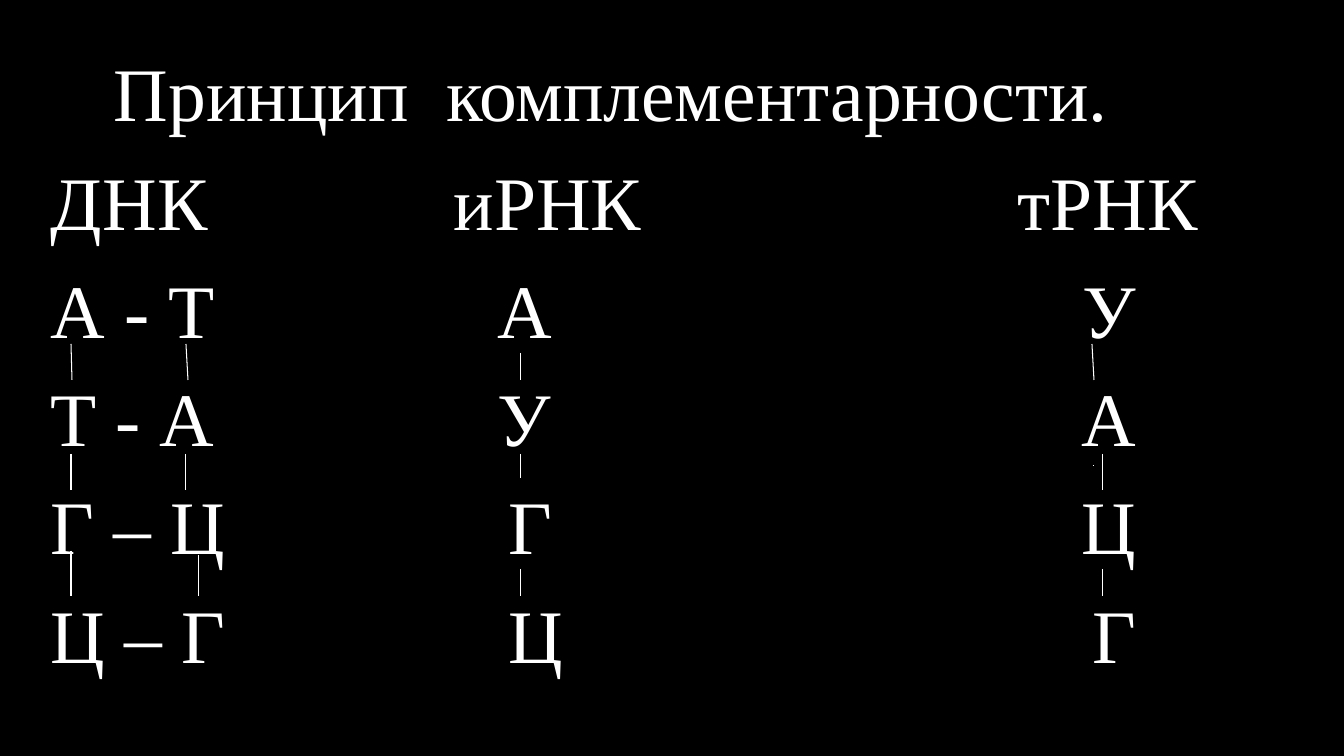
from lxml import etree
from pptx import Presentation, util as u
from pptx.dml.color import RGBColor
from pptx.enum import shapes, text
from pptx.oxml.ns import qn

# Content: text and tab stops (px from the text edge, alignment)
COLOR = {"back": "000000", "ink": "FFFFFF"}
FONT, SIZE = "Times New Roman", 54
HEAD = [(403, "l"), (967, "l")]
UPPER = [(447, "l"), (1085, "r")]
LOWER = [(458, "l"), (1085, "r")]
ROWS = [
    ("\tПринцип  комплементарности.", [(63, "l")]),
    ("ДНК\tиРНК\tтРНК", HEAD),
    ("А - Т\tА\tУ", UPPER),
    ("Т - А\tУ\tА", UPPER),
    ("Г – Ц\tГ\tЦ", LOWER),
    ("Ц – Г\tЦ\tГ", LOWER),
]

# Bonds between bases, by strand: x, top, end x, bottom
BONDS = {
    "dna left": [(71, 344, 72, 380), (71, 454, 71, 490), (71, 551, 71, 596)],
    "dna right": [(186, 344, 188, 380), (186, 454, 186, 490),
                  (199, 555, 199, 596)],
    "mrna": [(521, 353, 521, 380), (521, 454, 521, 478),
             (521, 569, 521, 596)],
    "trna": [(1092, 344, 1094, 380), (1093, 466, 1094, 466),
             (1103, 454, 1103, 490), (1103, 569, 1103, 596)],
}


def px(n):
    return u.Inches(n / 100.8)


def ink(name):
    return RGBColor.from_string(COLOR[name])


deck = Presentation()
deck.slide_width, deck.slide_height = px(1344), px(756)
slide = deck.slides.add_slide(deck.slide_layouts[6])
slide.background.fill.solid()
slide.background.fill.fore_color.rgb = ink("back")

# Text table set with tab stops
box = slide.shapes.add_textbox(px(41), px(35), px(1230), px(655))
frame = box.text_frame
frame.word_wrap = True
frame.auto_size = text.MSO_AUTO_SIZE.SHAPE_TO_FIT_TEXT
for i, (line, stops) in enumerate(ROWS):
    para = frame.paragraphs[0] if i == 0 else frame.add_paragraph()
    para.line_spacing = 1.07
    para.space_after = u.Pt(8)
    tabs = etree.SubElement(para._p.get_or_add_pPr(), qn("a:tabLst"))
    for pos, side in stops:
        etree.SubElement(tabs, qn("a:tab"), pos=str(px(pos)), algn=side)
    run = para.add_run()
    run.text = line
    run.font.name = FONT
    run.font.size = u.Pt(SIZE)
    run.font.color.rgb = ink("ink")

# Bond lines
for strand in BONDS.values():
    for ends in strand:
        bond = slide.shapes.add_connector(
            shapes.MSO_CONNECTOR.STRAIGHT, *map(px, ends))
        bond.line.color.rgb = ink("ink")
        bond.line.width = u.Pt(0.75)
        etree.SubElement(bond._element.spPr, qn("a:effectLst"))

deck.save("out.pptx")
